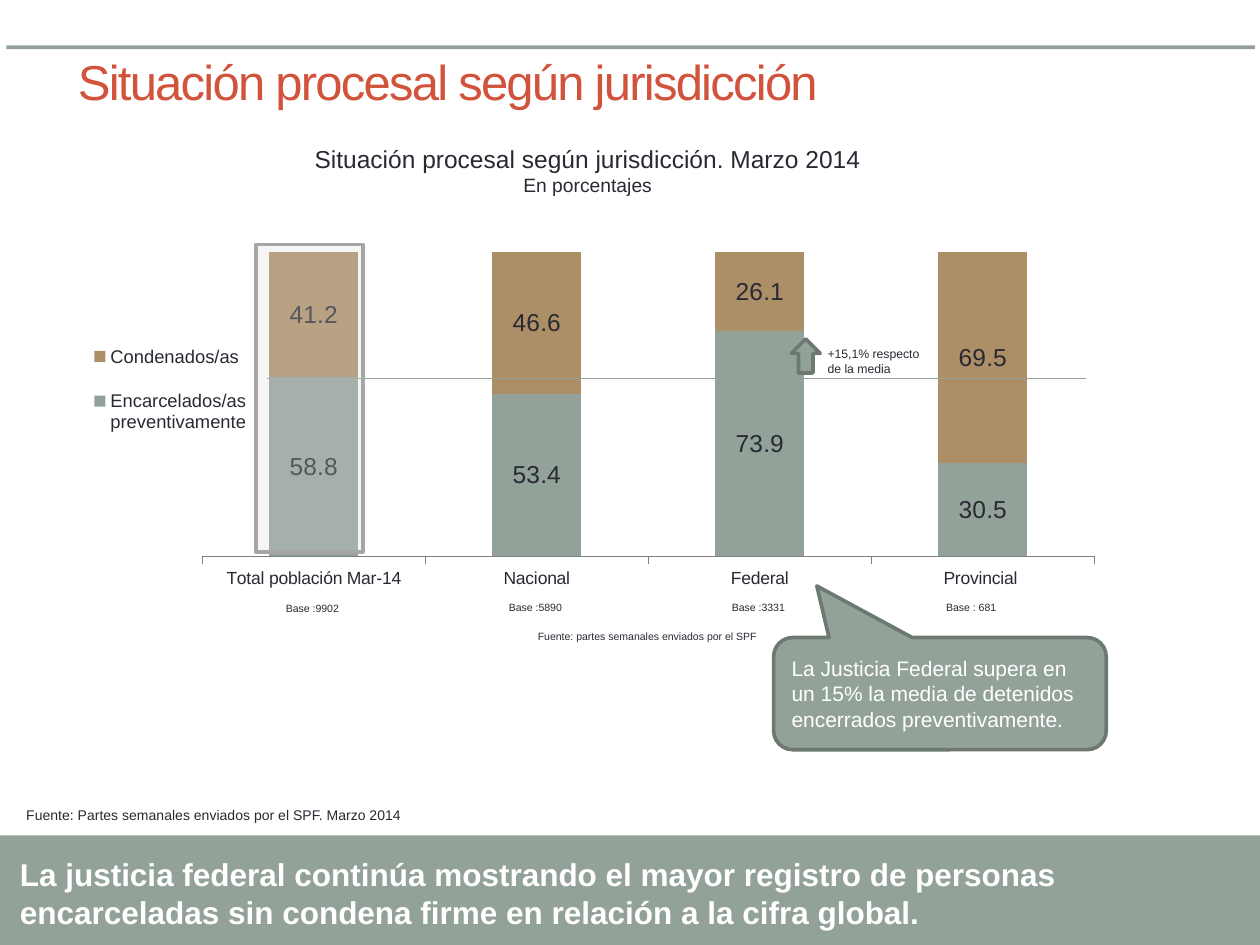
from pptx import Presentation
from pptx.chart.data import CategoryChartData
from pptx.dml.color import RGBColor
from pptx.enum.chart import XL_CHART_TYPE, XL_LABEL_POSITION, XL_LEGEND_POSITION, XL_TICK_MARK
from pptx.enum.shapes import MSO_CONNECTOR, MSO_SHAPE
from pptx.enum.text import MSO_ANCHOR, PP_ALIGN
from pptx.oxml import parse_xml
from pptx.oxml.ns import nsdecls, qn
from pptx.util import Inches, Pt
from lxml import etree

STACKED = XL_CHART_TYPE.COLUMN_STACKED_100
MIDDLE, TOP = MSO_ANCHOR.MIDDLE, MSO_ANCHOR.TOP
LEFT, CENTER = PP_ALIGN.LEFT, PP_ALIGN.CENTER
RECT, ARROW = MSO_SHAPE.RECTANGLE, MSO_SHAPE.RIGHT_ARROW
BUBBLE = MSO_SHAPE.ROUNDED_RECTANGULAR_CALLOUT
FONT = "Arial"
HEX = {"sage": "93A299", "moss": "6D7871", "tan": "AD8F67", "ink": "292934",
       "red": "D2533C", "white": "FFFFFF", "gray": "A6A6A6", "pale": "DDDDDD",
       "axis": "808080"}
HUE = {name: RGBColor.from_string(code) for name, code in HEX.items()}

# The slide is a grid of 100 columns by 75 rows
COLS, ROWS = 100, 75
deck = Presentation()
deck.slide_width, deck.slide_height = Inches(10), Inches(7.5)
CELL = deck.slide_width / COLS
slide = deck.slides.add_slide(deck.slide_layouts[6])
shapes = slide.shapes


def write(box, *lines, size=6, color="ink", bold=False, align=LEFT,
          anchor=TOP, wrap=True, track=None):
    """Fill a shape with one paragraph per line; a line may be (text, size)."""
    frame = box.text_frame
    frame.word_wrap, frame.vertical_anchor = wrap, anchor
    for i, line in enumerate(lines):
        text, points = line if isinstance(line, tuple) else (line, size)
        para = frame.add_paragraph() if i else frame.paragraphs[0]
        para.alignment = align
        run = para.add_run()
        run.text = text
        run.font.name, run.font.size, run.font.bold = FONT, Pt(points), bold
        run.font.color.rgb = HUE[color]
        if track:
            run.font._element.set("spc", str(track))


def draw(kind, at, fill="sage", edge=None):
    """Add a preset shape, or a text box when kind is None."""
    spot = [round(n * CELL) for n in at]
    if kind is None:
        return shapes.add_textbox(*spot)
    shape = shapes.add_shape(kind, *spot)
    shape.shadow.inherit = False
    shape.fill.solid()
    shape.fill.fore_color.rgb = HUE[fill]
    if edge:
        shape.line.color.rgb = HUE[edge]
        shape.line.width = Pt(2.08)
    else:
        shape.line.fill.background()
    return shape


# Rule and title
draw(RECT, (0.5, 3.6, 99.1, 0.3))
write(draw(None, (5.2, 0.2, 90, 12.5)), "Situación procesal según jurisdicción",
      size=28, color="red", anchor=MIDDLE, track=-100)

# Callout
bubble = draw(BUBBLE, (61.4, 50.6, 26.4, 8.9), edge="moss")
for i, share in enumerate((-0.37, -0.96, 0.17)):
    bubble.adjustments[i] = share
write(bubble, "La Justicia Federal supera en un 15% la media de detenidos "
      "encerrados preventivamente.", size=12, color="white", anchor=MIDDLE)

# Chart
data = CategoryChartData(number_format="0.0")
data.categories = ["Total población Mar-14", "Nacional", "Federal", "Provincial "]
data.add_series("Encarcelados/as preventivamente", (58.8, 53.4, 73.9, 30.5))
data.add_series("Condenados/as", (41.2, 46.6, 26.1, 69.5))
spot = [round(n * CELL) for n in (5.1, 19.1, 84.3, 29.5)]
chart = shapes.add_chart(STACKED, *spot, data).chart
chart.has_title = False
chart.font.name, chart.font.size = FONT, Pt(18)
chart.font.color.rgb = HUE["ink"]

plot = chart.plots[0]
plot.gap_width, plot.overlap = 150, 100
plot.vary_by_categories = False
for series, color in zip(plot.series, ("sage", "tan")):
    series.format.fill.solid()
    series.format.fill.fore_color.rgb = HUE[color]
    labels = series.data_labels
    labels.show_value = True
    labels.number_format, labels.number_format_is_linked = "0.0", False
    labels.position = XL_LABEL_POSITION.CENTER
    labels.font.name, labels.font.size = FONT, Pt(14)
    labels.font.color.rgb = HUE["ink"]

chart.value_axis.visible = False
chart.value_axis.has_major_gridlines = False
axis = chart.category_axis
axis.major_tick_mark = XL_TICK_MARK.OUTSIDE
axis.tick_labels.font.size = Pt(10)
axis.format.line.color.rgb = HUE["axis"]

chart.has_legend = True
legend = chart.legend
legend.position = XL_LEGEND_POSITION.RIGHT
legend.include_in_layout = False
legend.font.size = Pt(10.5)

# Fixed places for the plot and the legend, as shares of the chart
area = chart._chartSpace.chart.plotArea
for old in area.findall(qn("c:layout")):
    area.remove(old)
for host, index, inner, place in (
        (area, 0, '<c:layoutTarget val="inner"/>', (0.13, 0.03, 0.84, 0.82)),
        (legend._element, 1, "", (0.02, 0.22, 0.16, 0.36))):
    for old in host.findall(qn("c:layout")):
        host.remove(old)
    marks = "".join(f'<c:{side}Mode val="edge"/>' for side in "xy")
    marks += "".join(f'<c:{side} val="{n}"/>' for side, n in zip("xywh", place))
    host.insert(index, parse_xml(
        f'<c:layout {nsdecls("c")}><c:manualLayout>{inner}{marks}'
        "</c:manualLayout></c:layout>"))

write(draw(None, (19.5, 10.9, 54.3, 5.2)),
      "Situación procesal según jurisdicción. Marzo 2014",
      ("En porcentajes", 11), size=14, align=CENTER)

# Mean line and frame around the total
ends = [round(n * CELL) for n in (21.2, 30.05, 86.2, 30.05)]
mean = shapes.add_connector(MSO_CONNECTOR.STRAIGHT, *ends)
mean.line.color.rgb, mean.line.width = HUE["sage"], Pt(0.75)
etree.SubElement(mean._element.spPr, qn("a:effectLst"))
total = draw(RECT, (20.3, 19.4, 8.5, 24.4), fill="pale", edge="gray")
tint = total._element.spPr.find(qn("a:solidFill"))[0]
etree.SubElement(tint, qn("a:alpha")).set("val", "25000")

# Notes under and beside the columns
for text, left, top, width in (
        ("Base :9902", 21.7, 47.3, 6.3), ("Base :5890", 39.4, 47.2, 6.3),
        ("Base :3331", 57.1, 47.2, 6.3), ("Base : 681", 74.1, 47.2, 6.1),
        ("Fuente: partes semanales enviados por el SPF", 41.7, 49.5, 19.6)):
    write(draw(None, (left, top, width, 2)), text, wrap=False)
arrow = draw(ARROW, (62.6, 27.1, 2.7, 2.3), edge="moss")
arrow.rotation = 270
write(draw(None, (64.7, 27, 9.6, 3.4)), "+15,1% respecto de la media", size=7)

# Source and closing band
write(draw(None, (1.1, 63.5, 32.3, 2.4)),
      "Fuente: Partes semanales enviados por el SPF. Marzo 2014", size=8, wrap=False)
draw(RECT, (0, 66.3, COLS, ROWS - 66.3))
write(draw(None, (0.6, 67.4, COLS - 0.6, 7.1)),
      "La justicia federal continúa mostrando el mayor registro de personas "
      "encarceladas sin condena firme en relación a la cifra global.",
      size=18, color="white", bold=True)

deck.save("out.pptx")
